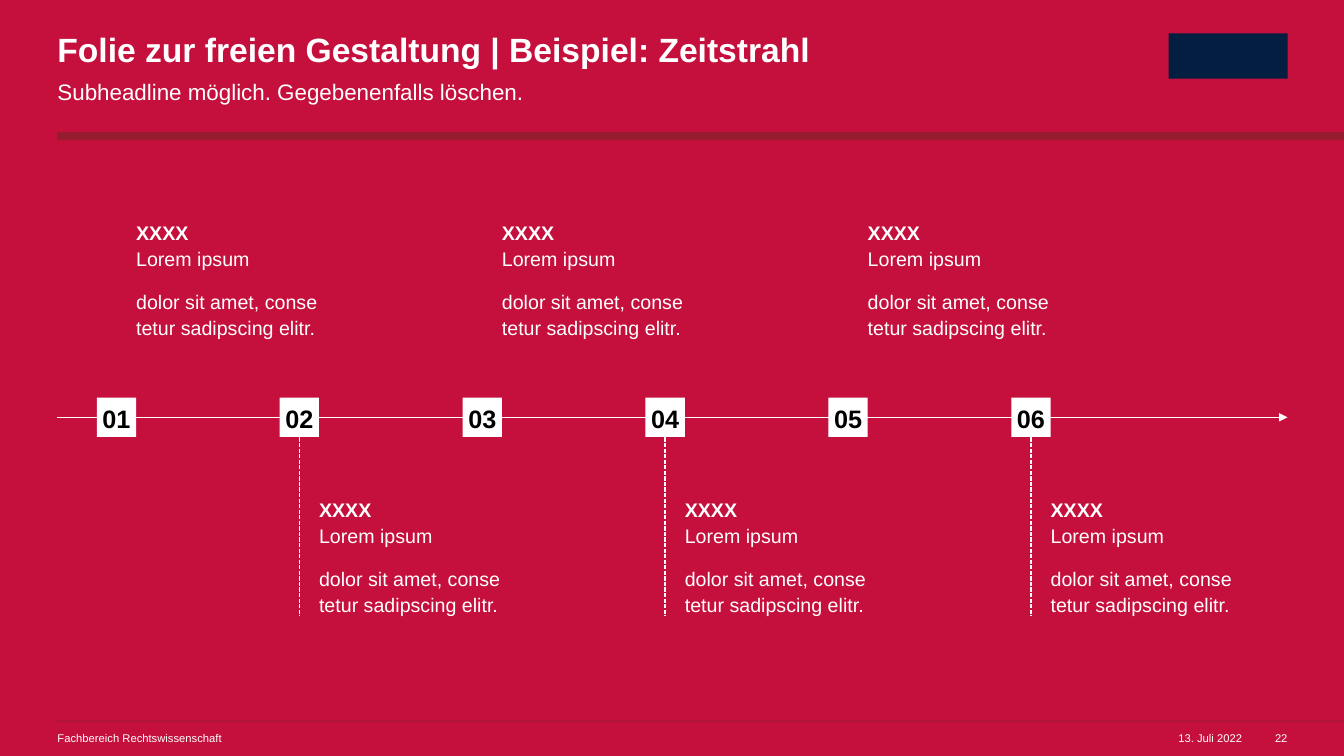
import pptx
import pptx.util
import pptx.dml.color
import pptx.enum.dml
import pptx.enum.shapes
import pptx.enum.text
from dataclasses import dataclass
from pptx.util import Inches

HEADLINE = "Folie zur freien Gestaltung | Beispiel: Zeitstrahl"
SUBHEADLINE = "Subheadline möglich. Gegebenenfalls löschen."
DEPARTMENT, DATE, PAGE = "Fachbereich Rechtswissenschaft", "13. Juli 2022", "22"
ENTRY = ("XXXX", "Lorem ipsum", ("dolor sit amet, conse", "tetur sadipscing elitr."))
MILESTONES = [(number, *ENTRY) for number in ("01", "02", "03", "04", "05", "06")]

SLIDE_WIDTH, SLIDE_HEIGHT = 13.33, 7.5
LEFT, RIGHT = 0.57, 12.77
AXIS_Y = 4.14
MARKER = 0.39
FIRST_MARKER, LAST_MARKER = 0.96, 10.03
ABOVE_Y, BELOW_Y = 2.17, 4.92
ENTRY_SIZE = (1.95, 1.18)
STEM_TOP, STEM_BOTTOM = 4.34, 6.11

ALIGN = pptx.enum.text.PP_ALIGN
ANCHOR = pptx.enum.text.MSO_ANCHOR


@dataclass(frozen=True)
class Theme:
    """Colours, font and type sizes of the slide."""
    background: str = "C50F3C"
    band: str = "971B2F"
    emblem: str = "041E42"
    light: str = "FFFFFF"
    dark: str = "000000"
    font: str = "Arial"
    headline: int = 24
    marker: int = 18
    subheadline: int = 16
    entry: int = 14
    footer: int = 8


THEME = Theme()


def rgb(colour):
    """Turn a hex string into a colour."""
    return pptx.dml.color.RGBColor.from_string(colour)


def add_block(slide, left, top, width, height, colour):
    """Add a plain filled rectangle."""
    block = slide.shapes.add_shape(pptx.enum.shapes.MSO_SHAPE.RECTANGLE, Inches(left),
                                   Inches(top), Inches(width), Inches(height))
    block.shadow.inherit = False
    block.fill.solid()
    block.fill.fore_color.rgb = rgb(colour)
    block.line.fill.background()
    return block


def add_label(slide, left, top, width, height):
    """Add an empty text box."""
    return slide.shapes.add_textbox(Inches(left), Inches(top), Inches(width), Inches(height))


def prepare(holder, anchor=ANCHOR.TOP, wrap=True):
    """Clear the margins of a text holder and return its frame."""
    frame = holder.text_frame
    frame.margin_left = frame.margin_right = frame.margin_top = frame.margin_bottom = 0
    frame.auto_size = pptx.enum.text.MSO_AUTO_SIZE.NONE
    frame.vertical_anchor = anchor
    frame.word_wrap = wrap
    return frame


def set_paragraph(paragraph, lines, size, colour=THEME.light, align=ALIGN.LEFT,
                  spacing=1.0, after=0):
    """Write (text, bold) lines into a paragraph, one run each."""
    paragraph.alignment = align
    paragraph.line_spacing = spacing
    paragraph.space_before = pptx.util.Pt(0)
    paragraph.space_after = pptx.util.Pt(after)
    for position, (text, bold) in enumerate(lines):
        if position:
            paragraph.add_line_break()
        run = paragraph.add_run()
        run.text = text
        run.font.name = THEME.font
        run.font.size = pptx.util.Pt(size)
        run.font.bold = bold
        run.font.color.rgb = rgb(colour)


def add_line(slide, start, end):
    """Add a thin light line without shadow."""
    line = slide.shapes.add_connector(pptx.enum.shapes.MSO_CONNECTOR.STRAIGHT,
                                      *map(Inches, start + end))
    line.line.color.rgb = rgb(THEME.light)
    line.line.width = pptx.util.Pt(1)
    properties = line._element.spPr
    properties.append(properties.makeelement(pptx.oxml.ns.qn("a:effectLst"), {}))
    return line


def add_header(slide):
    """Add the bands, the emblem block, the headline and the subheadline."""
    for top, height in ((7.15, 0.01), (1.31, 0.08)):
        add_block(slide, LEFT, top, SLIDE_WIDTH - LEFT, height, THEME.band)
    add_block(slide, 11.59, 0.33, 1.18, 0.45, THEME.emblem)
    headline = slide.shapes.title
    headline.left, headline.top = Inches(LEFT), Inches(0.33)
    headline.width, headline.height = Inches(7.49), Inches(0.36)
    set_paragraph(prepare(headline).paragraphs[0], [(HEADLINE, True)], THEME.headline, spacing=0.9)
    subheadline = prepare(add_label(slide, LEFT, 0.75, 7.49, 0.27))
    set_paragraph(subheadline.paragraphs[0], [(SUBHEADLINE, False)], THEME.subheadline,
                  spacing=1.1, after=12)


def add_footer(slide):
    """Add the department, the date and the page number."""
    for text, left, width, align, wrap in ((DATE, 11.67, 0.65, ALIGN.RIGHT, False),
                                           (DEPARTMENT, LEFT, 5.98, ALIGN.LEFT, True),
                                           (PAGE, 12.64, 0.13, ALIGN.RIGHT, False)):
        frame = prepare(add_label(slide, left, 7.26, width, 0.13), wrap=wrap)
        set_paragraph(frame.paragraphs[0], [(text, False)], THEME.footer, align=align)


def add_milestone(slide, index, number, heading, lead, details):
    """Add a numbered marker with its entry, alternating above and below the axis."""
    left = FIRST_MARKER + index * (LAST_MARKER - FIRST_MARKER) / (len(MILESTONES) - 1)
    below = index % 2 == 1
    marker = prepare(add_block(slide, left, AXIS_Y - MARKER / 2, MARKER, MARKER, THEME.light),
                     ANCHOR.MIDDLE)
    set_paragraph(marker.paragraphs[0], [(number, True)], THEME.marker, THEME.dark,
                  ALIGN.CENTER, 1.1, 12)
    entry = prepare(add_label(slide, left + MARKER, BELOW_Y if below else ABOVE_Y, *ENTRY_SIZE))
    set_paragraph(entry.paragraphs[0], [(heading, True), (lead, False)], THEME.entry,
                  spacing=1.1, after=12)
    set_paragraph(entry.add_paragraph(), [(detail, False) for detail in details], THEME.entry,
                  spacing=1.1, after=12)
    if below:
        center = left + MARKER / 2
        stem = add_line(slide, (center, STEM_TOP), (center, STEM_BOTTOM))
        stem.line.dash_style = pptx.enum.dml.MSO_LINE.SQUARE_DOT


def main():
    """Build the timeline slide and save it."""
    deck = pptx.Presentation()
    deck.slide_width, deck.slide_height = Inches(SLIDE_WIDTH), Inches(SLIDE_HEIGHT)
    slide = deck.slides.add_slide(deck.slide_layouts[5])
    slide.background.fill.solid()
    slide.background.fill.fore_color.rgb = rgb(THEME.background)
    add_header(slide)
    add_footer(slide)
    axis = add_line(slide, (LEFT, AXIS_Y), (RIGHT, AXIS_Y))
    outline = axis.line._get_or_add_ln()
    outline.append(outline.makeelement(pptx.oxml.ns.qn("a:tailEnd"), {"type": "triangle"}))
    for index, milestone in enumerate(MILESTONES):
        add_milestone(slide, index, *milestone)
    deck.save("out.pptx")


if __name__ == "__main__":
    main()
